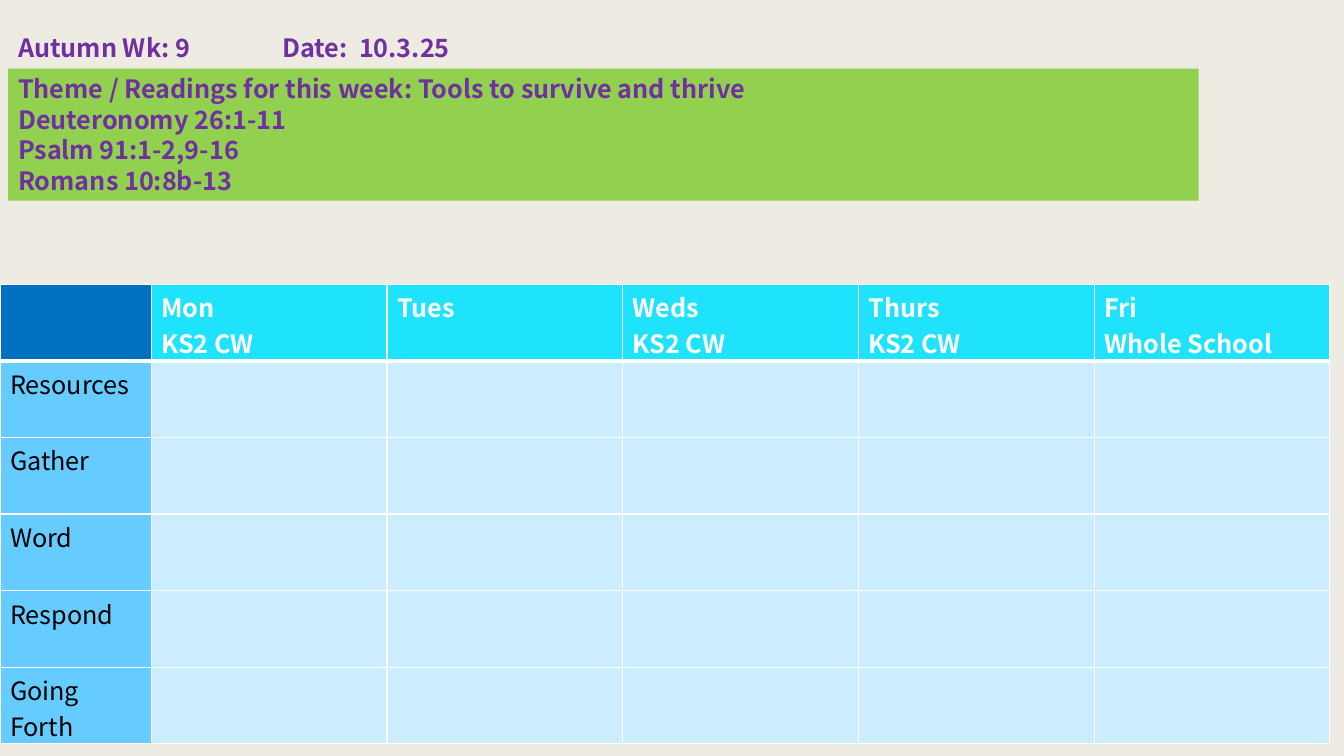
from dataclasses import dataclass

from lxml import etree
from pptx import Presentation
from pptx.dml.color import RGBColor
from pptx.enum.shapes import MSO_SHAPE
from pptx.enum.text import MSO_ANCHOR, PP_ALIGN
from pptx.oxml.ns import qn
from pptx.util import Pt

RECTANGLE = MSO_SHAPE.RECTANGLE
TOP = MSO_ANCHOR.TOP
LEFT = PP_ALIGN.LEFT

FONT = "Noto Sans CJK JP"
PURPLE = "7030A0"
WHITE = "FFFFFF"
BLACK = "000000"
SIDES = ("lnL", "lnR", "lnT", "lnB")
DATE_TABS = (188.6, 243.6)

HEADINGS = ["", "Mon\nKS2 CW", "Tues", "Weds\nKS2 CW", "Thurs\nKS2 CW", "Fri\nWhole School"]
STAGES = ["Resources", "Gather", "Word", "Respond", "Going Forth"]
STAGE_WIDTH, DAY_WIDTH, ROW_HEIGHT = 108, 168.4, 54.72


@dataclass
class Panel:
    text: str
    left: float
    top: float
    width: float
    height: float
    fill: str = ""
    tabs: tuple[float, ...] = ()


@dataclass
class CellStyle:
    fill: str
    color: str = BLACK
    bold: bool = False
    bottom_border: float = 1


PANELS = [
    Panel("Autumn Wk: 9\tDate:\t10.3.25", 5.8, 19.4, 934.6, 28.8, tabs=DATE_TABS),
    Panel(
        "Theme / Readings for this week: Tools to survive and thrive\n"
        "Deuteronomy 26:1-11\nPsalm 91:1-2,9-16\nRomans 10:8b-13",
        5.8, 49, 850.3, 94.4, fill="92D050",
    ),
]
CORNER = CellStyle("0070C0", WHITE, True, 3)
HEADING = CellStyle("1FE3FD", WHITE, True, 3)
STAGE = CellStyle("66CCFF")
ENTRY = CellStyle("CCECFF")


def rgb(value: str) -> RGBColor:
    return RGBColor.from_string(value)


def add_tabs(paragraph, positions: tuple[float, ...]) -> None:
    tab_list = etree.SubElement(paragraph._p.get_or_add_pPr(), qn("a:tabLst"))
    for position in positions:
        etree.SubElement(tab_list, qn("a:tab"), pos=str(Pt(position)), algn="l")


def write(frame, text: str, color: str, bold: bool, spacing: float,
          tabs: tuple[float, ...] = ()) -> None:
    frame.text = text
    frame.word_wrap = True
    for paragraph in frame.paragraphs:
        if tabs:
            add_tabs(paragraph, tabs)
        paragraph.alignment = LEFT
        paragraph.line_spacing = Pt(spacing)
        paragraph.font.name = FONT
        paragraph.font.size = Pt(18)
        paragraph.font.bold = bold
        paragraph.font.color.rgb = rgb(color)


def add_panel(slide, panel: Panel) -> None:
    bounds = [Pt(n) for n in (panel.left, panel.top, panel.width, panel.height)]
    if panel.fill:
        shape = slide.shapes.add_shape(RECTANGLE, *bounds)
        shape.shadow.inherit = False
        shape.fill.solid()
        shape.fill.fore_color.rgb = rgb(panel.fill)
        shape.line.fill.background()
    else:
        shape = slide.shapes.add_textbox(*bounds)
    shape.text_frame.vertical_anchor = TOP
    write(shape.text_frame, panel.text, PURPLE, True, 21.7, panel.tabs)


def add_borders(cell, bottom: float) -> None:
    properties = cell._tc.get_or_add_tcPr()
    for index, side in enumerate(SIDES):
        width = bottom if side == "lnB" else 1
        line = etree.Element(qn(f"a:{side}"), w=str(Pt(width)))
        fill = etree.SubElement(line, qn("a:solidFill"))
        etree.SubElement(fill, qn("a:srgbClr"), val=WHITE)
        properties.insert(index, line)


def fill_cell(cell, text: str, style: CellStyle) -> None:
    cell.margin_bottom = 0
    cell.fill.solid()
    cell.fill.fore_color.rgb = rgb(style.fill)
    write(cell.text_frame, text, style.color, style.bold, 25.5)
    add_borders(cell, style.bottom_border)


def add_timetable(slide) -> None:
    rows, days = len(STAGES) + 1, len(HEADINGS) - 1
    timetable = slide.shapes.add_table(
        rows, days + 1, 0, Pt(203), Pt(STAGE_WIDTH + days * DAY_WIDTH), Pt(rows * ROW_HEIGHT)
    ).table
    timetable.first_row = False
    timetable.horz_banding = False
    for index, column in enumerate(timetable.columns):
        column.width = Pt(DAY_WIDTH if index else STAGE_WIDTH)
    for row in timetable.rows:
        row.height = Pt(ROW_HEIGHT)
    for index, heading in enumerate(HEADINGS):
        fill_cell(timetable.cell(0, index), heading, HEADING if index else CORNER)
    for row, stage in enumerate(STAGES, start=1):
        fill_cell(timetable.cell(row, 0), stage, STAGE)
        for day in range(1, days + 1):
            fill_cell(timetable.cell(row, day), "", ENTRY)


def main() -> None:
    presentation = Presentation()
    presentation.slide_width = Pt(960)
    presentation.slide_height = Pt(540)
    slide = presentation.slides.add_slide(presentation.slide_layouts[6])
    slide.background.fill.solid()
    slide.background.fill.fore_color.rgb = rgb("EEEBE2")
    for panel in PANELS:
        add_panel(slide, panel)
    add_timetable(slide)
    presentation.save("out.pptx")


if __name__ == "__main__":
    main()
